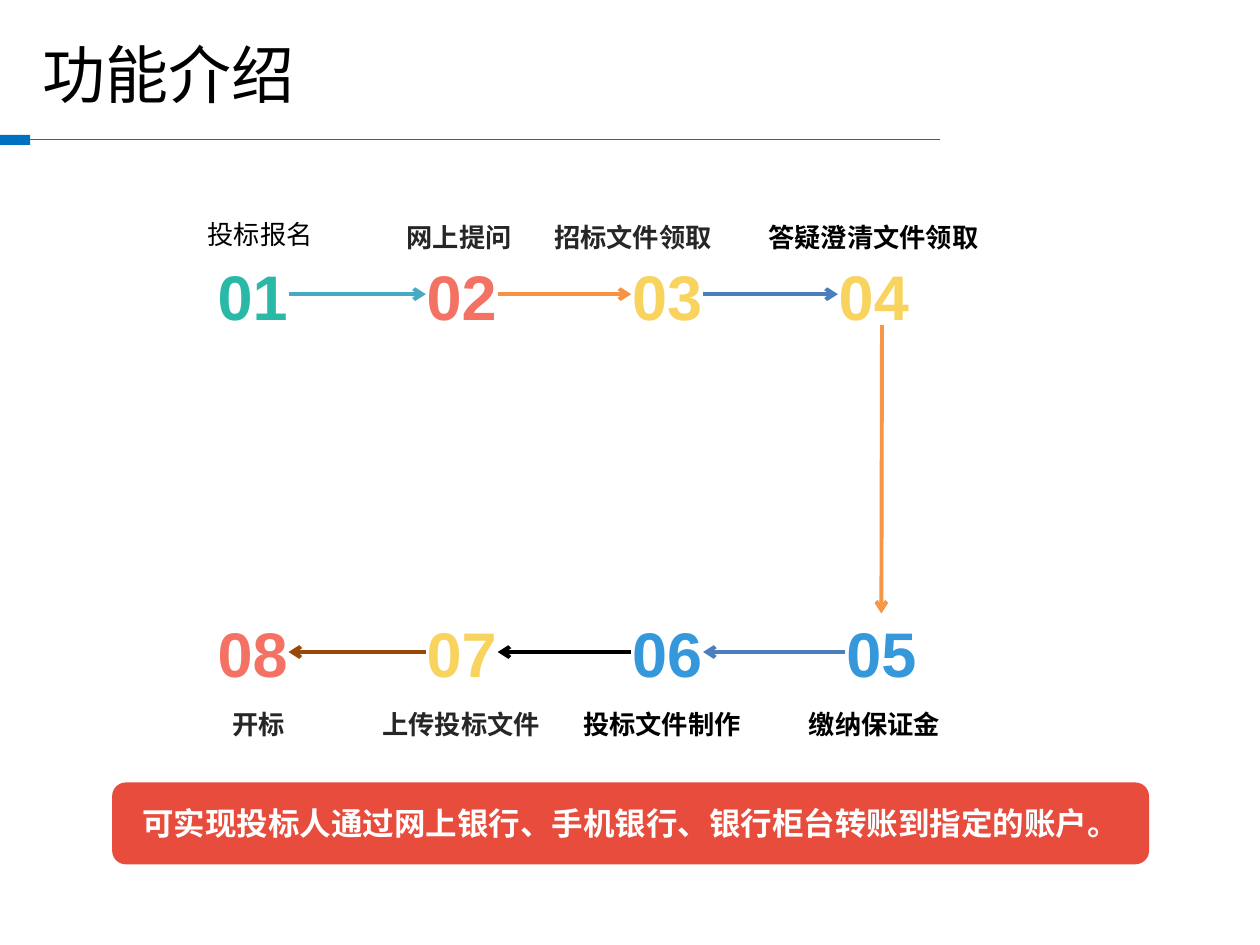
from dataclasses import dataclass

from lxml import etree
from pptx import Presentation
from pptx import util as u
from pptx.dml.color import RGBColor
from pptx.enum import shapes, text
from pptx.oxml.ns import qn


@dataclass(frozen=True)
class Theme:
    han: str = "Noto Sans CJK SC"
    latin: str = "Arial"
    title: int = 36
    number: int = 36
    banner: int = 18
    label: int = 15
    arrow: float = 2.25
    rule: float = 0.75
    black: str = "000000"
    dark: str = "262626"
    white: str = "FFFFFF"
    accent: str = "0070C0"
    teal: str = "29B9A6"
    coral: str = "F47264"
    yellow: str = "F8D35E"
    sky: str = "3498DB"
    red: str = "E74C3C"
    cyan: str = "46AAC5"
    orange: str = "F69240"
    amber: str = "F79646"
    blue: str = "4B7EBC"
    brown: str = "984807"


THEME = Theme()

# The slide is a grid of 100 columns by 75 rows
WIDTH, HEIGHT = u.Inches(10), u.Inches(7.5)
COLUMN, ROW = WIDTH / 100, HEIGHT / 75
TOP, LEFT, BOTTOM, RIGHT = range(4)
NUMBER_SIZE = (5.7, 6.1)
LABEL_HEIGHT = 3.5
UPPER, LOWER = (20.3, 17.1), (48.7, 55.7)  # rows of numbers and labels

# number, its column, rows, colour; label, its column, width, colour, format
STEPS = [
    ("01", 17.2, (20.3, 16.8), THEME.teal,
     "投标报名", 15.5, 12.5, THEME.black, {"bold": False}),
    ("02", 33.8, UPPER, THEME.coral, "网上提问", 31.3, 10.6, THEME.dark, {}),
    ("03", 50.1, UPPER, THEME.yellow, "招标文件领取", 43, 17, THEME.dark, {}),
    ("04", 66.5, UPPER, THEME.yellow, "答疑澄清文件领取", 60, 19.9, THEME.black, {}),
    ("05", 67.1, LOWER, THEME.sky,
     "缴纳保证金", 60.4, 18, THEME.black, {"centred": True}),
    ("06", 50.1, LOWER, THEME.sky, "投标文件制作", 45.3, 15.4, THEME.black, {}),
    ("07", 33.8, LOWER, THEME.yellow,
     "上传投标文件", 28.2, 16.8, THEME.dark, {"centred": True}),
    ("08", 17.2, LOWER, THEME.coral,
     "开标", 15.5, 10, THEME.dark, {"centred": True}),
]

# from, side, to, side, colour
ARROWS = [
    ("01", RIGHT, "02", LEFT, THEME.cyan),
    ("02", RIGHT, "03", LEFT, THEME.orange),
    ("03", RIGHT, "04", LEFT, THEME.blue),
    ("05", LEFT, "06", RIGHT, THEME.blue),
    ("06", LEFT, "07", RIGHT, THEME.black),
    ("07", LEFT, "08", RIGHT, THEME.brown),
]


def place(*cells):
    """Turn column, row, column, row into slide lengths."""
    return [u.Emu(round(cell * unit))
            for cell, unit in zip(cells, (COLUMN, ROW, COLUMN, ROW))]


def write(shape, words, size, color, font=THEME.han, bold=True,
          centred=False, anchor=text.MSO_ANCHOR.TOP):
    frame = shape.text_frame
    frame.word_wrap = True
    frame.vertical_anchor = anchor
    para = frame.paragraphs[0]
    para.alignment = text.PP_ALIGN.CENTER if centred else text.PP_ALIGN.LEFT
    span = para.add_run()
    span.text = words
    formats = {"size": u.Pt(size), "bold": bold, "name": font}
    for name, value in formats.items():
        setattr(span.font, name, value)
    span.font.color.rgb = RGBColor.from_string(color)
    east_asian = etree.SubElement(span.font._element, qn("a:ea"))
    east_asian.set("typeface", font)


def add_text(page, cells, *args, **formats):
    box = page.shapes.add_textbox(*place(*cells))
    write(box, *args, **formats)
    return box


def add_block(page, preset, cells, color):
    block = page.shapes.add_shape(preset, *place(*cells))
    block.shadow.inherit = False
    block.fill.solid()
    block.fill.fore_color.rgb = RGBColor.from_string(color)
    block.line.fill.background()
    return block


def add_line(page, cells, color, width, arrow=False):
    line = page.shapes.add_connector(
        shapes.MSO_CONNECTOR.STRAIGHT, *place(*cells))
    line.line.color.rgb = RGBColor.from_string(color)
    line.line.width = u.Pt(width)
    if arrow:
        etree.SubElement(line.line._get_or_add_ln(),
                         qn("a:tailEnd")).set("type", "arrow")
    etree.SubElement(line._element.spPr, qn("a:effectLst"))
    return line


def add_step(page, number, column, rows, color,
             label, label_column, label_width, label_color, formats):
    box = add_text(page, (column, rows[0], *NUMBER_SIZE), number,
                   THEME.number, color, font=THEME.latin, centred=True,
                   anchor=text.MSO_ANCHOR.BOTTOM)
    for side in ("left", "top", "right", "bottom"):
        setattr(box.text_frame, "margin_" + side, 0)
    add_text(page, (label_column, rows[1], label_width, LABEL_HEIGHT),
             label, THEME.label, label_color, **formats)
    return box


def main():
    deck = Presentation()
    deck.slide_width, deck.slide_height = WIDTH, HEIGHT
    page = deck.slides.add_slide(deck.slide_layouts[6])

    # Title and its rule
    add_line(page, (74.6, 11.1, 2, 11.1), THEME.accent, THEME.rule)
    add_block(page, shapes.MSO_SHAPE.RECTANGLE, (0, 10.7, 2.4, 0.8),
              THEME.accent)
    add_text(page, (2.4, 2.1, 72.2, 7.5), "功能介绍", THEME.title,
             THEME.black, bold=False, anchor=text.MSO_ANCHOR.MIDDLE)

    # Numbered steps with their labels
    boxes = {step[0]: add_step(page, *step) for step in STEPS}

    # Arrows along the two rows
    for start, start_side, end, end_side, color in ARROWS:
        arrow = add_line(page, (0, 0, 0, 0), color, THEME.arrow, arrow=True)
        arrow.begin_connect(boxes[start], start_side)
        arrow.end_connect(boxes[end], end_side)

    # Arrow down to the lower row
    turn = add_line(page, (70, 25.8, 70, 48.7), THEME.amber, THEME.arrow,
                    arrow=True)
    turn.end_connect(boxes["05"], TOP)

    # Closing banner
    banner = add_block(page, shapes.MSO_SHAPE.ROUNDED_RECTANGLE,
                       (8.9, 62.1, 82.3, 6.5), THEME.red)
    write(banner, "可实现投标人通过网上银行、手机银行、银行柜台转账到指定的账户。",
          THEME.banner, THEME.white, centred=True,
          anchor=text.MSO_ANCHOR.MIDDLE)

    deck.save("out.pptx")


if __name__ == "__main__":
    main()
